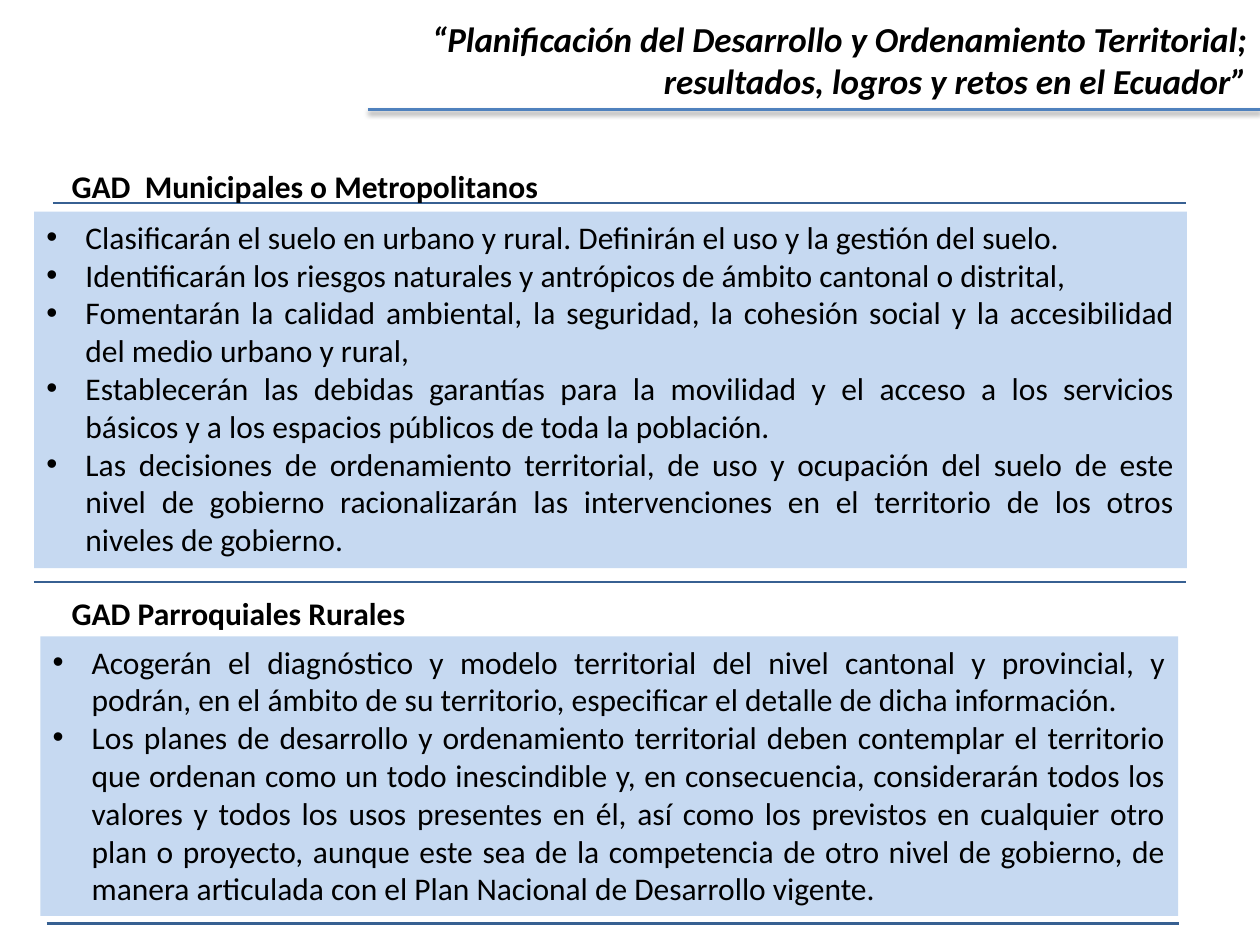
from lxml import etree
from pptx import Presentation
from pptx.dml.color import RGBColor
from pptx.enum.shapes import MSO_CONNECTOR, MSO_SHAPE
from pptx.enum.text import MSO_ANCHOR, MSO_AUTO_SIZE, PP_ALIGN
from pptx.oxml import parse_xml
from pptx.oxml.ns import nsdecls, qn
from pptx.util import Inches, Pt

STRAIGHT = MSO_CONNECTOR.STRAIGHT
RECTANGLE = MSO_SHAPE.RECTANGLE
TOP = MSO_ANCHOR.TOP
GROW = MSO_AUTO_SIZE.SHAPE_TO_FIT_TEXT
LEFT, RIGHT, JUSTIFY = PP_ALIGN.LEFT, PP_ALIGN.RIGHT, PP_ALIGN.JUSTIFY

BLACK = RGBColor(0x00, 0x00, 0x00)
BLUE = RGBColor(0x4F, 0x81, 0xBD)
DARK_BLUE = RGBColor(0x37, 0x60, 0x92)
PALE_BLUE = RGBColor(0xC6, 0xD9, 0xF1)

BODY = {"name": "Calibri", "size": Pt(18)}
HEADING = {**BODY, "bold": True}
TITLE = {**HEADING, "size": Pt(20), "italic": True}

SHADOW = (
    f'<a:outerShdw {nsdecls("a")} blurRad="39370" dist="20320" dir="5400000" rotWithShape="0">'
    '<a:srgbClr val="000000"><a:alpha val="38000"/></a:srgbClr></a:outerShdw>'
)

TITLE_LINES = [
    "“Planificación del Desarrollo y Ordenamiento Territorial;",
    "resultados, logros y retos en el Ecuador”",
]
MUNICIPAL_DUTIES = [
    "Clasificarán el suelo en urbano y rural. Definirán el uso y la gestión del suelo.",
    "Identificarán los riesgos naturales y antrópicos de ámbito cantonal o distrital,",
    "Fomentarán la calidad ambiental, la seguridad, la cohesión social y la accesibilidad "
    "del medio urbano y rural,",
    "Establecerán las debidas garantías para la movilidad y el acceso a los servicios "
    "básicos y a los espacios públicos de toda la población.",
    "Las decisiones de ordenamiento territorial, de uso y ocupación del suelo de este "
    "nivel de gobierno racionalizarán las intervenciones en el territorio de los otros "
    "niveles de gobierno.",
]
PARISH_DUTIES = [
    "Acogerán el diagnóstico y modelo territorial del nivel cantonal y provincial, y "
    "podrán, en el ámbito de su territorio, especificar el detalle de dicha información.",
    "Los planes de desarrollo y ordenamiento territorial deben contemplar el territorio "
    "que ordenan como un todo inescindible y, en consecuencia, considerarán todos los "
    "valores y todos los usos presentes en él, así como los previstos en cualquier otro "
    "plan o proyecto, aunque este sea de la competencia de otro nivel de gobierno, de "
    "manera articulada con el Plan Nacional de Desarrollo vigente.",
]


class SlideBuilder:
    """Hold the text style and the current slide, and add each kind of element."""

    def __init__(self, s, color=BLACK):
        self.s = s
        self.color = color

    def rule(self, x1, x2, y, color=DARK_BLUE, width=1.5, shadow=False):
        ends = [Inches(v) for v in (x1, y, x2, y)]
        sp = self.s.shapes.add_connector(STRAIGHT, *ends)
        sp.line.color.rgb = color
        sp.line.width = Pt(width)
        effects = etree.SubElement(sp._element.spPr, qn("a:effectLst"))
        if shadow:
            effects.append(parse_xml(SHADOW))

    def fill_text(self, sp, lines, style, align, wrap=True, spacing=None, bullets=False):
        tf = sp.text_frame
        tf.word_wrap = wrap
        tf.auto_size = GROW
        tf.vertical_anchor = TOP
        for i, line in enumerate(lines):
            p = tf.add_paragraph() if i else tf.paragraphs[0]
            p.alignment = align
            p.line_spacing = spacing
            if bullets:
                self.bullet(p)
            r = p.add_run()
            r.text = line
            r.font.color.rgb = self.color
            for key, value in style.items():
                setattr(r.font, key, value)

    def bullet(self, p):
        pPr = p._p.get_or_add_pPr()
        indent = Inches(0.31)
        pPr.set("marL", str(indent))
        pPr.set("indent", str(-indent))
        etree.SubElement(pPr, qn("a:buFont"), typeface="Arial")
        etree.SubElement(pPr, qn("a:buChar"), char="•")

    def text(self, box, lines, style, align=LEFT, **options):
        sp = self.s.shapes.add_textbox(*[Inches(v) for v in box])
        self.fill_text(sp, lines, style, align, **options)

    def heading(self, box, line):
        self.text(box, [line], HEADING, wrap=False, spacing=0.9)

    def panel(self, box, lines):
        sp = self.s.shapes.add_shape(RECTANGLE, *[Inches(v) for v in box])
        sp.shadow.inherit = False
        sp.fill.solid()
        sp.fill.fore_color.rgb = PALE_BLUE
        sp.line.fill.background()
        self.fill_text(sp, lines, BODY, JUSTIFY, bullets=True)


def main():
    prs = Presentation()
    prs.slide_width, prs.slide_height = Inches(10), Inches(7.5)
    b = SlideBuilder(prs.slides.add_slide(prs.slide_layouts[6]))

    b.rule(2.92, 10, 0.87, BLUE, 2, shadow=True)
    b.text((1.68, 0.09, 8.32, 0.77), TITLE_LINES, TITLE, RIGHT)
    for x1, x2, y in [(0.42, 9.41, 1.61), (0.27, 9.41, 4.62), (0.37, 9.36, 7.33)]:
        b.rule(x1, x2, y)

    b.panel((0.27, 1.68, 9.15, 2.83), MUNICIPAL_DUTIES)
    b.heading((0.47, 1.31, 3.99, 0.37), "GAD  Municipales o Metropolitanos")
    b.panel((0.32, 5.05, 9.03, 2.22), PARISH_DUTIES)
    b.heading((0.47, 4.7, 2.93, 0.37), "GAD Parroquiales Rurales")

    prs.save("out.pptx")


if __name__ == "__main__":
    main()
